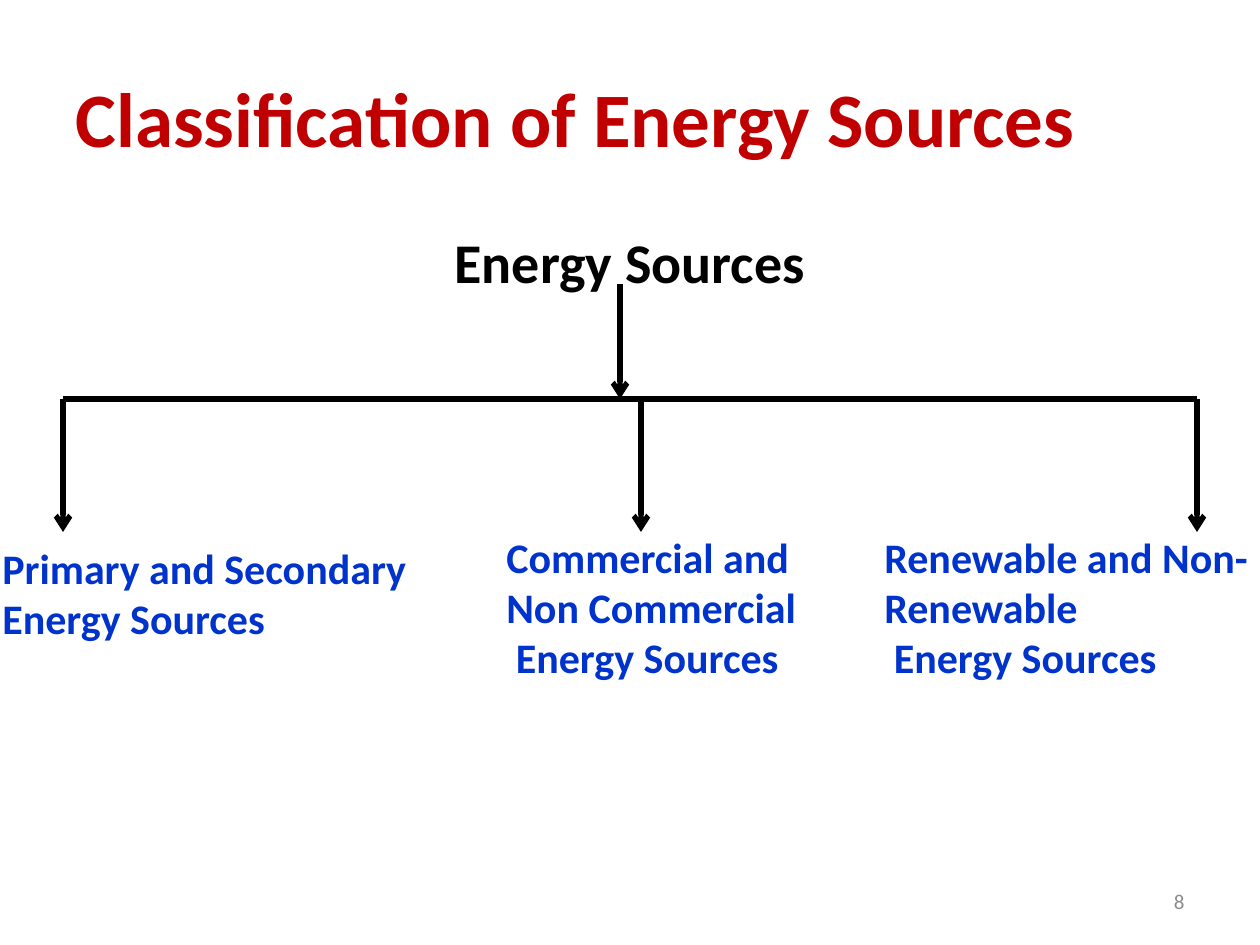
import dataclasses

import pptx
import pptx.dml.color
import pptx.enum.shapes
import pptx.enum.text
import pptx.oxml
import pptx.oxml.ns
import pptx.util
from pptx.enum.text import MSO_ANCHOR, PP_ALIGN

EMU_PER_PX = 914400 / 126


@dataclasses.dataclass(frozen=True)
class Theme:
    font: str = "Calibri"
    title_color: str = "C00000"
    root_color: str = "000000"
    branch_color: str = "0033CC"
    number_color: str = "8C8C8C"
    title_size: int = 44
    root_size: int = 32
    branch_size: int = 24
    number_size: int = 12
    line_width: int = 3


@dataclasses.dataclass(frozen=True)
class Box:
    left: int
    top: int
    width: int
    height: int


@dataclasses.dataclass(frozen=True)
class Branch:
    arrow_x: int
    box: Box
    lines: tuple[str, ...]


THEME = Theme()
SLIDE_WIDTH, SLIDE_HEIGHT = 1260, 945
TITLE_BOX = Box(63, 38, 1134, 158)
BODY_BOX = Box(63, 221, 1134, 624)
NUMBER_BOX = Box(903, 876, 294, 50)
ROOT_X, ROOT_Y, BAR_Y, BRANCH_Y = 620, 284, 399, 532
BRANCHES = (
    Branch(63, Box(-10, 536, 514, 115), ("Primary and Secondary Energy Sources",)),
    Branch(641, Box(494, 525, 514, 165),
           ("Commercial and", "Non Commercial", " Energy Sources")),
    Branch(1197, Box(872, 525, 514, 165),
           ("Renewable and Non- Renewable", " Energy Sources")),
)


def px(length: int) -> pptx.util.Emu:
    return pptx.util.Emu(round(length * EMU_PER_PX))


def rgb(color: str) -> pptx.dml.color.RGBColor:
    return pptx.dml.color.RGBColor.from_string(color)


def write_text(shape, box: Box, lines: tuple[str, ...], *, size: int, color: str,
               bold: bool = True, align=PP_ALIGN.LEFT, anchor=MSO_ANCHOR.TOP) -> None:
    shape.left, shape.top = px(box.left), px(box.top)
    shape.width, shape.height = px(box.width), px(box.height)
    frame = shape.text_frame
    frame.word_wrap = True
    frame.vertical_anchor = anchor
    frame.text = "\n".join(lines)
    for paragraph in frame.paragraphs:
        paragraph.alignment = align
        font = paragraph.runs[0].font
        font.name, font.size, font.bold = THEME.font, pptx.util.Pt(size), bold
        font.color.rgb = rgb(color)


def add_text_box(slide, box: Box, lines: tuple[str, ...], **text_format) -> None:
    shape = slide.shapes.add_textbox(0, 0, 0, 0)
    write_text(shape, box, lines, **text_format)


def add_line(slide, start: tuple[int, int], end: tuple[int, int],
             arrow: bool = True) -> None:
    connector = slide.shapes.add_connector(
        pptx.enum.shapes.MSO_CONNECTOR.STRAIGHT, *map(px, start + end))
    connector.line.color.rgb = rgb(THEME.root_color)
    connector.line.width = pptx.util.Pt(THEME.line_width)
    properties = connector._element.spPr
    if arrow:
        head = pptx.oxml.parse_xml(
            f'<a:tailEnd {pptx.oxml.ns.nsdecls("a")} type="arrow"/>')
        connector.line._get_or_add_ln().append(head)
    properties.append(pptx.oxml.parse_xml(
        f'<a:effectLst {pptx.oxml.ns.nsdecls("a")}/>'))


def remove_bullet(paragraph) -> None:
    paragraph._p.get_or_add_pPr().append(pptx.oxml.parse_xml(
        f'<a:buNone {pptx.oxml.ns.nsdecls("a")}/>'))


def main() -> None:
    presentation = pptx.Presentation()
    presentation.slide_width = px(SLIDE_WIDTH)
    presentation.slide_height = px(SLIDE_HEIGHT)
    slide = presentation.slides.add_slide(presentation.slide_layouts[1])

    body = slide.placeholders[1]
    write_text(body, BODY_BOX, ("Energy Sources",), size=THEME.root_size,
               color=THEME.root_color, align=PP_ALIGN.CENTER)
    remove_bullet(body.text_frame.paragraphs[0])
    write_text(slide.shapes.title, TITLE_BOX, ("Classification of Energy Sources",),
               size=THEME.title_size, color=THEME.title_color,
               anchor=MSO_ANCHOR.MIDDLE)

    add_line(slide, (ROOT_X, ROOT_Y), (ROOT_X, BAR_Y))
    add_line(slide, (BRANCHES[0].arrow_x, BAR_Y), (BRANCHES[-1].arrow_x, BAR_Y),
             arrow=False)
    for branch in BRANCHES:
        add_line(slide, (branch.arrow_x, BAR_Y), (branch.arrow_x, BRANCH_Y))
        add_text_box(slide, branch.box, branch.lines, size=THEME.branch_size,
                     color=THEME.branch_color)

    add_text_box(slide, NUMBER_BOX, ("8",), size=THEME.number_size,
                 color=THEME.number_color, bold=False, align=PP_ALIGN.RIGHT,
                 anchor=MSO_ANCHOR.MIDDLE)
    presentation.save("out.pptx")


if __name__ == "__main__":
    main()
